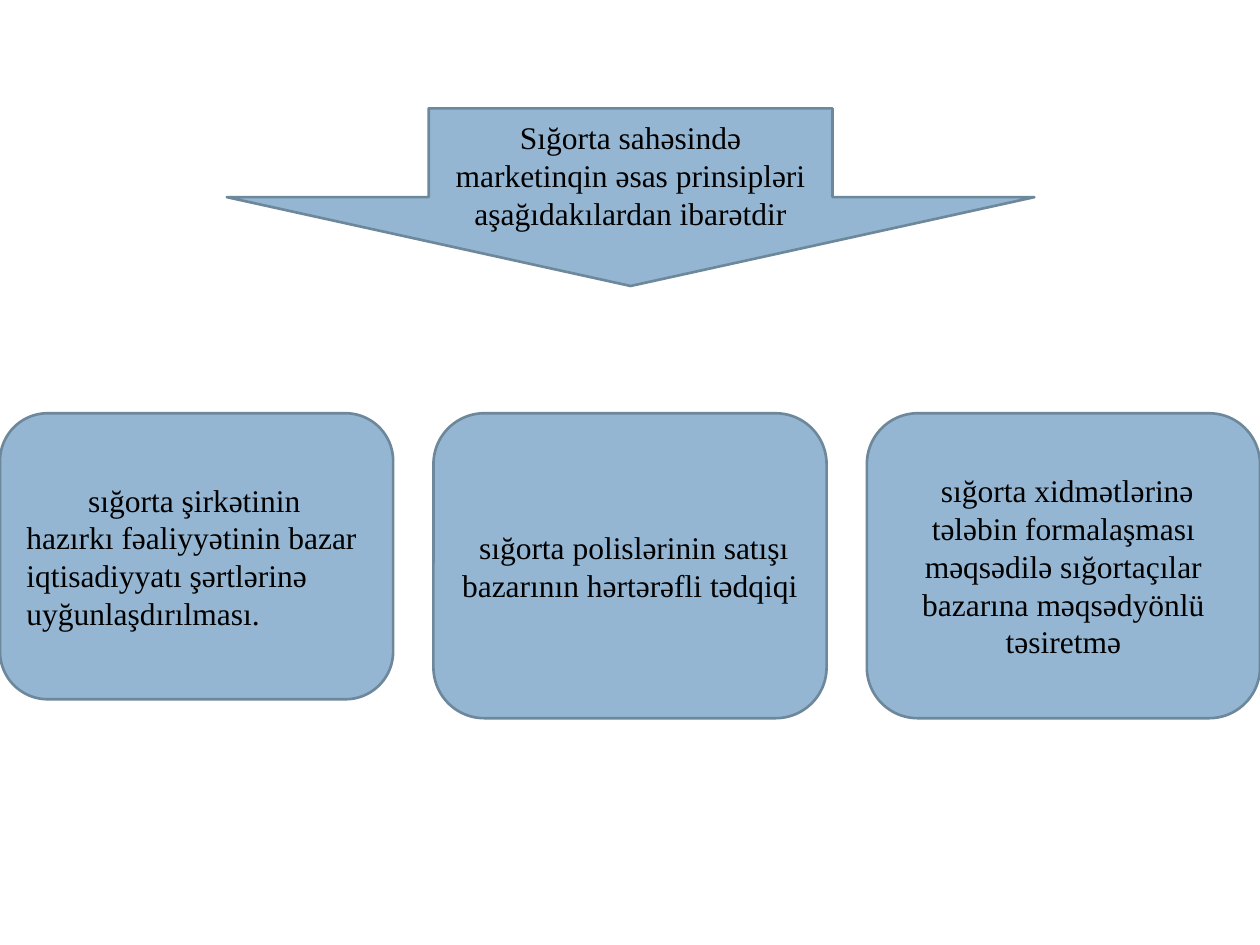
from dataclasses import dataclass

from pptx import Presentation
from pptx.dml.color import RGBColor
from pptx.enum.shapes import MSO_SHAPE as Shape
from pptx.enum.text import MSO_ANCHOR as Anchor, PP_ALIGN as Align
from pptx.util import Inches, Pt


@dataclass(frozen=True)
class Theme:
    """Colours, font and sizes shared by the slide."""
    fill: RGBColor = RGBColor(0x94, 0xB6, 0xD2)
    outline: RGBColor = RGBColor(0x6D, 0x87, 0x9B)
    ink: RGBColor = RGBColor(0, 0, 0)
    outline_width: Pt = Pt(1.5)
    font: str = "Times New Roman"
    size: Pt = Pt(18)


THEME = Theme()
HEADING = "Sığorta sahəsində marketinqin əsas prinsipləri aşağıdakılardan ibarətdir"
PRINCIPLES = [
    (Shape.FLOWCHART_ALTERNATE_PROCESS, 2.27, Align.LEFT, 0.49,
     "sığorta şirkətinin hazırkı fəaliyyətinin bazar iqtisadiyyatı şərtlərinə uyğunlaşdırılması."),
    (Shape.ROUNDED_RECTANGLE, 2.42, Align.CENTER, 0,
     " sığorta polislərinin satışı bazarının hərtərəfli tədqiqi"),
    (Shape.ROUNDED_RECTANGLE, 2.42, Align.CENTER, 0,
     " sığorta xidmətlərinə tələbin formalaşması məqsədilə sığortaçılar bazarına məqsədyönlü təsiretmə"),
]


def add_block(slide, kind, box, text, align=Align.CENTER, first_indent=0):
    """Place one filled, outlined shape with its text in the box."""
    block = slide.shapes.add_shape(kind, *map(Inches, box))
    block.shadow.inherit = False
    block.fill.solid()
    block.fill.fore_color.rgb = THEME.fill
    block.line.color.rgb = THEME.outline
    block.line.width = THEME.outline_width
    frame = block.text_frame
    frame.word_wrap = True
    frame.vertical_anchor = Anchor.MIDDLE
    paragraph = frame.paragraphs[0]
    paragraph.alignment = align
    if first_indent:
        properties = paragraph._p.get_or_add_pPr()
        for name, length in {"marL": 0, "indent": first_indent}.items():
            properties.set(name, str(Inches(length)))
    run = paragraph.add_run()
    run.text = text
    for name, value in {"name": THEME.font, "size": THEME.size}.items():
        setattr(run.font, name, value)
    run.font.color.rgb = THEME.ink


def add_principles(slide, box):
    """Spread the principles evenly across the box, aligned at the top."""
    left, top, width, card_width = box
    step = (width - card_width) / (len(PRINCIPLES) - 1)
    for column, (kind, height, align, indent, text) in enumerate(PRINCIPLES):
        card = (left + column * step, top, card_width, height)
        add_block(slide, kind, card, text, align, indent)


def main():
    """Build and save the slide."""
    deck = Presentation()
    deck.slide_width, deck.slide_height = Inches(10), Inches(7.5)
    slide = deck.slides.add_slide(deck.slide_layouts[6])
    add_block(slide, Shape.DOWN_ARROW, (1.8, 0.86, 6.41, 1.41), HEADING)
    add_principles(slide, (0, 3.28, 10, 3.12))
    deck.save("out.pptx")


if __name__ == "__main__":
    main()
